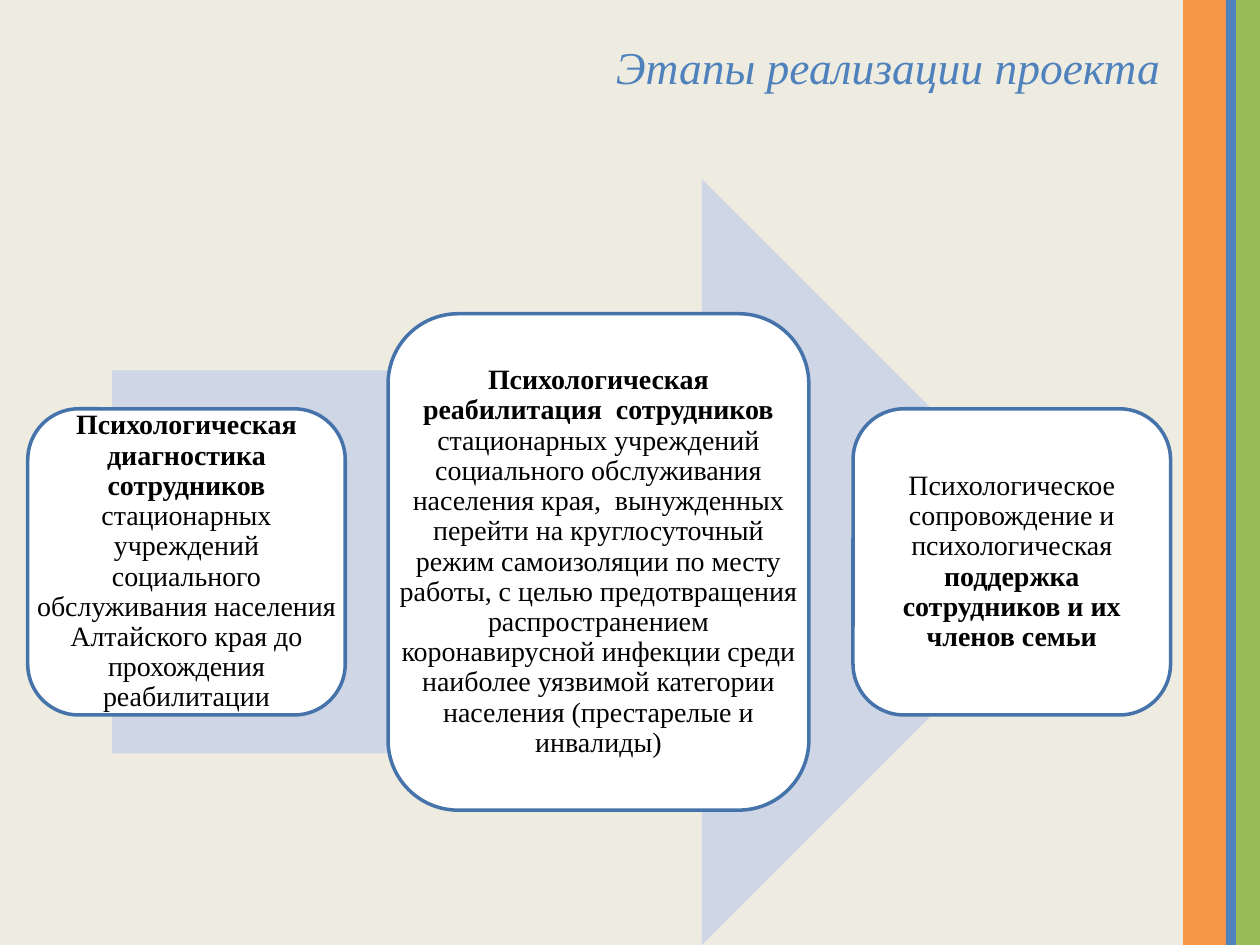
from pptx import Presentation
from pptx.dml.color import RGBColor
from pptx.enum.shapes import MSO_SHAPE
from pptx.enum.text import MSO_ANCHOR, PP_ALIGN
from pptx.util import Inches, Pt

RECTANGLE = MSO_SHAPE.RECTANGLE
ROUNDED = MSO_SHAPE.ROUNDED_RECTANGLE
RIGHT_ARROW = MSO_SHAPE.RIGHT_ARROW
MIDDLE = MSO_ANCHOR.MIDDLE
CENTER, RIGHT = PP_ALIGN.CENTER, PP_ALIGN.RIGHT

CREAM = RGBColor(0xEE, 0xEC, 0xE1)
ORANGE = RGBColor(0xF7, 0x96, 0x46)
BLUE = RGBColor(0x4F, 0x81, 0xBD)
GREEN = RGBColor(0x9B, 0xBB, 0x59)
PALE_BLUE = RGBColor(0xCF, 0xD7, 0xE7)
OUTLINE = RGBColor(0x46, 0x74, 0xAA)
WHITE = RGBColor(0xFF, 0xFF, 0xFF)
BLACK = RGBColor(0, 0, 0)
FONT = "Times New Roman"

deck = Presentation()
deck.slide_width, deck.slide_height = Inches(10), Inches(7.5)
page = deck.slides.add_slide(deck.slide_layouts[6])
page.background.fill.solid()
page.background.fill.fore_color.rgb = CREAM


def add_filled(kind, left, top, width, height, color):
    shape = page.shapes.add_shape(
        kind, Inches(left), Inches(top), Inches(width), Inches(height))
    shape.shadow.inherit = False
    shape.fill.solid()
    shape.fill.fore_color.rgb = color
    shape.line.fill.background()
    return shape


def add_text(left, top, width, height, runs, size, color, align):
    box = page.shapes.add_textbox(
        Inches(left), Inches(top), Inches(width), Inches(height))
    frame = box.text_frame
    frame.word_wrap = True
    frame.vertical_anchor = MIDDLE
    para = frame.paragraphs[0]
    para.alignment = align
    para.font.name = FONT
    para.font.size = Pt(size)
    para.font.color.rgb = color
    for text, bold in runs:
        span = para.add_run()
        span.text = text
        span.font.bold = bold
    return box


for left, width, color in [(9.39, 0.35, ORANGE), (9.81, 0.19, GREEN), (9.73, 0.08, BLUE)]:
    add_filled(RECTANGLE, left, 0, width, 7.5, color)

title = add_text(1.06, -0.18, 8.25, 1.41, [("Этапы реализации проекта", False)], 26, BLUE, RIGHT)
title.text_frame.paragraphs[0].font.italic = True

add_filled(RIGHT_ARROW, 0.89, 1.42, 7.72, 6.08, PALE_BLUE)

stages = [
    (0.22, 2.52, 2.43, [
        ("Психологическая диагностика сотрудников ", True),
        ("стационарных учреждений социального обслуживания населения "
         "Алтайского края до прохождения реабилитации", False)]),
    (3.08, 3.34, 3.94, [
        ("Психологическая реабилитация  сотрудников ", True),
        ("стационарных учреждений социального обслуживания населения края,  "
         "вынужденных перейти на круглосуточный режим самоизоляции по месту работы, "
         "с целью предотвращения распространением коронавирусной инфекции среди "
         "наиболее уязвимой категории населения (престарелые и инвалиды)", False)]),
    (6.77, 2.52, 2.43, [
        ("Психологическое сопровождение и психологическая ", False),
        ("поддержка сотрудников и их членов семьи", True)]),
]
middle_y = 4.46
for left, width, height, runs in stages:
    top = middle_y - height / 2
    card = add_filled(ROUNDED, left, top, width, height, WHITE)
    card.line.color.rgb = OUTLINE
    card.line.width = Pt(2)
    label = add_text(left, top, width, height, runs, 16, BLACK, CENTER)
    frame = label.text_frame
    frame.margin_left = frame.margin_right = Inches(0.07)
    frame.margin_top = frame.margin_bottom = Inches(0.07)
    frame.paragraphs[0].line_spacing = 0.9

deck.save("out.pptx")
